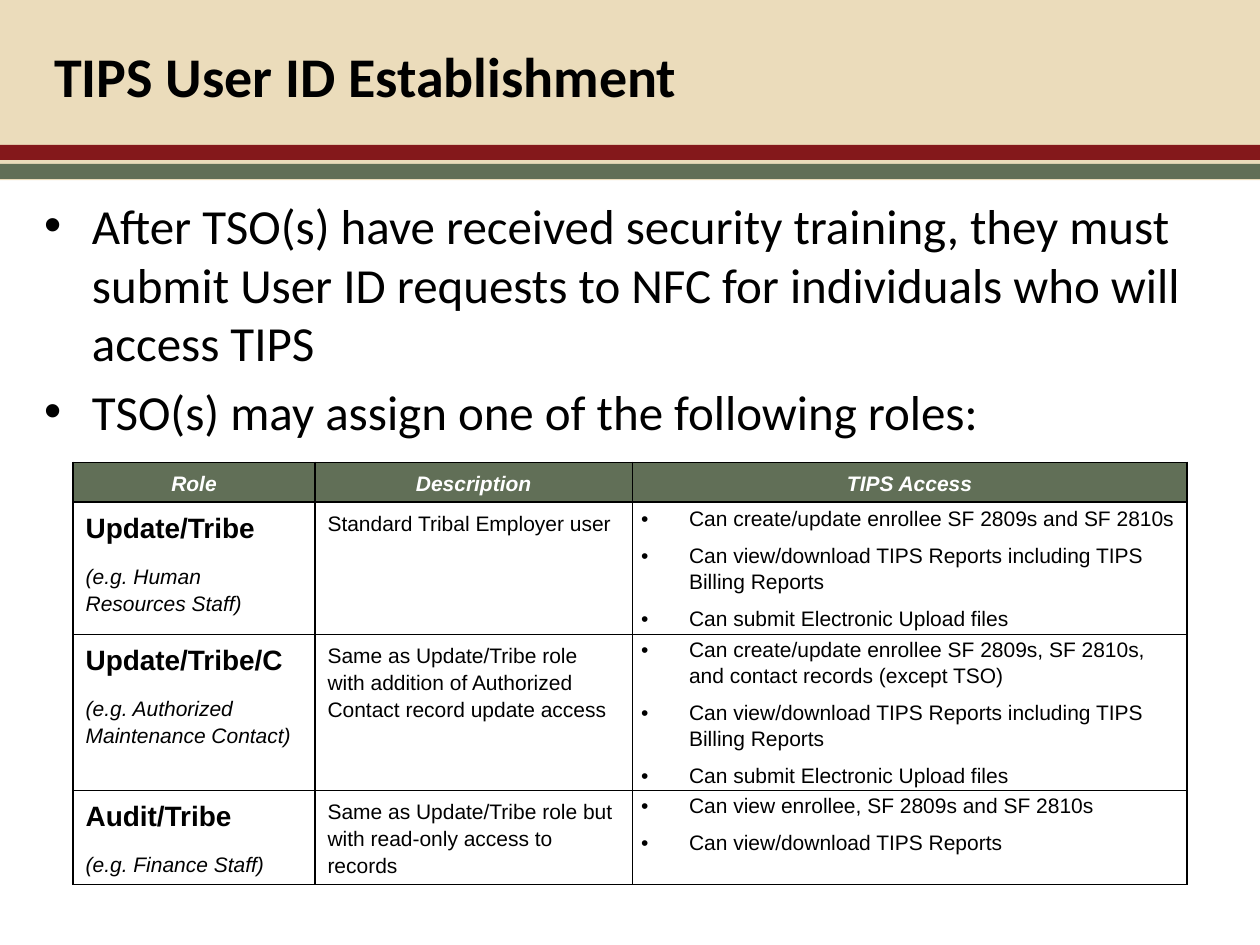
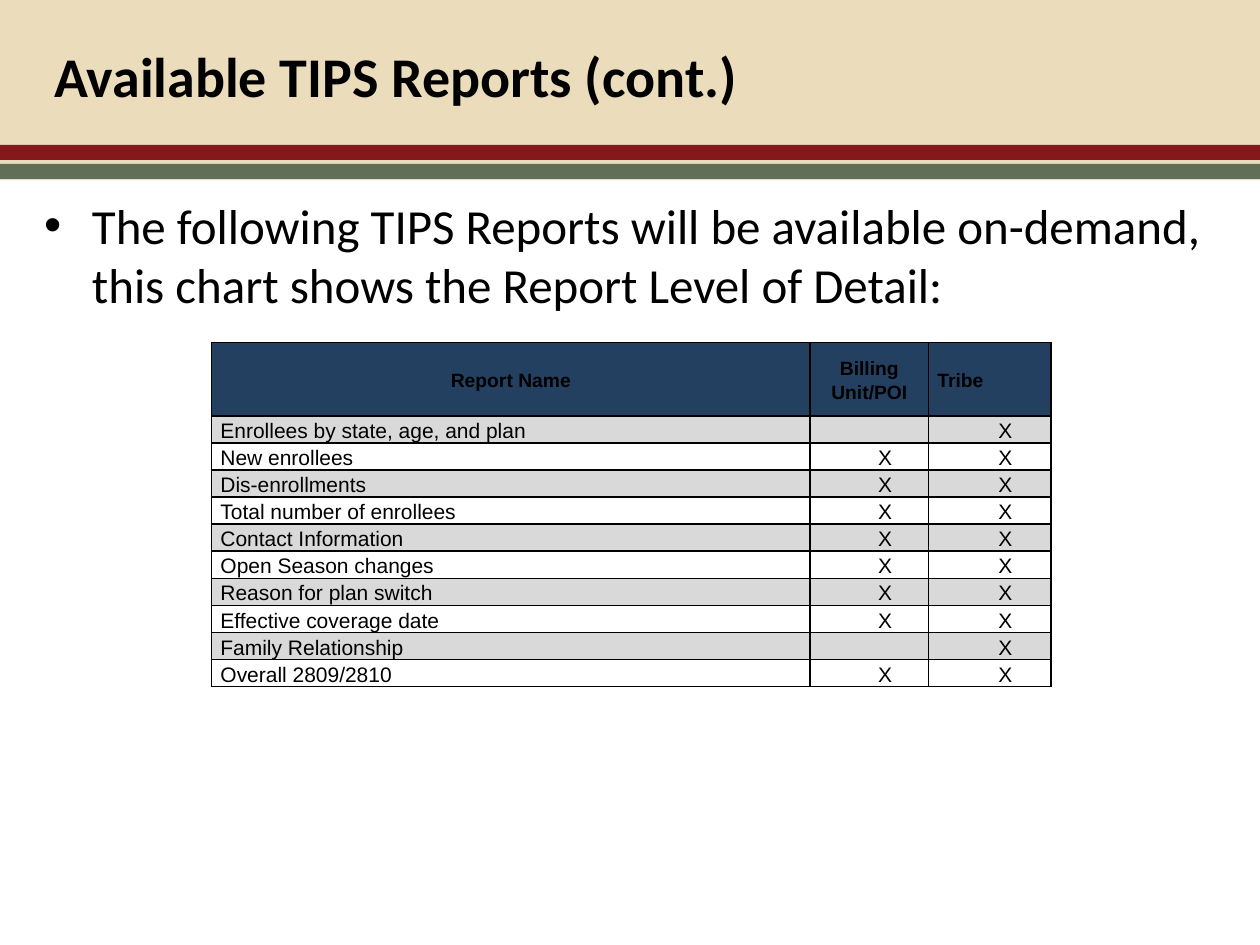
import dataclasses

import pptx
import pptx.dml.color
import pptx.enum.shapes
import pptx.enum.text
import pptx.oxml.xmlchemy
import pptx.util

Inches = pptx.util.Inches
Align = pptx.enum.text.PP_ALIGN
Anchor = pptx.enum.text.MSO_ANCHOR


@dataclasses.dataclass(frozen=True)
class Theme:
    """Colours, fonts and type sizes of the deck."""

    sand: str = "EBDCBB"
    red: str = "84181B"
    green: str = "616F57"
    navy: str = "244061"
    grey: str = "D9D9D9"
    white: str = "FFFFFF"
    black: str = "000000"
    heading_font: str = "Calibri"
    table_font: str = "Arial"
    title_size: float = 32
    body_size: float = 28
    role_size: float = 16
    table_size: float = 12
    report_header_size: float = 11
    table_line_spacing: float = 1.15


@dataclasses.dataclass(frozen=True)
class Box:
    """A rectangle in inches."""

    left: float
    top: float
    width: float
    height: float

    def lengths(self):
        """Return the four sides as lengths."""
        return [Inches(side) for side in dataclasses.astuple(self)]


THEME = Theme()
HEADER_BOX = Box(0, 0, 10, 1.43)
TITLE_BOX = Box(0.33, 0, 8.2, 1.2)
BODY_BOX = Box(0.25, 1.5, 9.5, 5.37)
ROLES_BOX = Box(0.58, 3.67, 8.84, 3.34)
REPORTS_BOX = Box(1.68, 2.72, 6.66, 2.73)
ROLE_MARGINS = (0.1, 0.05, 0.1, 0.05)
ACCESS_MARGINS = (0.07, 0.01, 0.07, 0.02)
REPORT_MARGINS = (0.07, 0, 0.07, 0)

VIEW_BILLING = "Can view/download TIPS Reports including TIPS Billing Reports"
SUBMIT_FILES = "Can submit Electronic Upload files"
ROLES = [
    ("Update/Tribe", "(e.g. Human Resources Staff)", "Standard Tribal Employer user",
     ["Can create/update enrollee SF 2809s and SF 2810s", VIEW_BILLING, SUBMIT_FILES]),
    ("Update/Tribe/C", "(e.g. Authorized Maintenance Contact)",
     "Same as Update/Tribe role with addition of Authorized Contact record update access",
     ["Can create/update enrollee SF 2809s, SF 2810s, and contact records (except TSO)",
      VIEW_BILLING, SUBMIT_FILES]),
    ("Audit/Tribe", "(e.g. Finance Staff)",
     "Same as Update/Tribe role but with read-only access to records",
     ["Can view enrollee, SF 2809s and SF 2810s", "Can view/download TIPS Reports"]),
]
REPORTS = ["Enrollees by state, age, and plan", "New enrollees", "Dis-enrollments",
           "Total number of enrollees", "Contact Information", "Open Season changes",
           "Reason for plan switch", "Effective coverage date", "Family Relationship",
           "Overall 2809/2810"]
TRIBE_ONLY = {"Enrollees by state, age, and plan", "Family Relationship"}


def rgb(colour):
    """Return a colour object for a hexadecimal string."""
    return pptx.dml.color.RGBColor.from_string(colour)


def add_child(parent, tag, **attributes):
    """Append a drawing element with attributes to its parent."""
    child = pptx.oxml.xmlchemy.OxmlElement(tag)
    for name, value in attributes.items():
        child.set(name, str(value))
    parent.append(child)
    return child


def add_text(paragraph, text, size, font=THEME.table_font, colour=THEME.black,
             bold=False, italic=False):
    """Add one formatted run to a paragraph."""
    run = paragraph.add_run()
    run.text = text
    run.font.name = font
    run.font.size = pptx.util.Pt(size)
    run.font.bold = bold
    run.font.italic = italic
    run.font.color.rgb = rgb(colour)


def next_paragraph(frame, index):
    """Return the first paragraph of a frame or add a further one."""
    return frame.paragraphs[0] if index == 0 else frame.add_paragraph()


def add_bullets(frame, items, size, font, space_before, space_after=0, line_spacing=None):
    """Fill a text frame with a bulleted list."""
    for index, item in enumerate(items):
        paragraph = next_paragraph(frame, index)
        properties = paragraph._p.get_or_add_pPr()
        properties.set("marL", str(Inches(0.38)))
        properties.set("indent", str(Inches(-0.38)))
        add_child(properties, "a:buFont", typeface="Arial")
        add_child(properties, "a:buChar", char="•")
        paragraph.space_before = pptx.util.Pt(space_before if index else 0)
        paragraph.space_after = pptx.util.Pt(space_after)
        if line_spacing:
            paragraph.line_spacing = pptx.util.Pt(line_spacing)
        add_text(paragraph, item, size, font)


def add_header_bands(presentation, slide, box):
    """Draw the header bands and move them behind everything on the master."""
    tree = presentation.slide_master.shapes.element
    bands = [(0, box.height, THEME.sand), (1.15, 0.12, THEME.red), (1.3, 0.12, THEME.green)]
    for index, (offset, height, colour) in enumerate(bands):
        place = Box(box.left, box.top + offset, box.width, height)
        band = slide.shapes.add_shape(
            pptx.enum.shapes.MSO_SHAPE.RECTANGLE, *place.lengths())
        band.shadow.inherit = False
        band.fill.solid()
        band.fill.fore_color.rgb = rgb(colour)
        band.line.fill.background()
        tree.insert(2 + index, band.element)


def place_placeholder(placeholder, box, anchor):
    """Move a placeholder to its box and return its text frame."""
    placeholder.left, placeholder.top, placeholder.width, placeholder.height = box.lengths()
    frame = placeholder.text_frame
    frame.word_wrap = True
    frame.auto_size = pptx.enum.text.MSO_AUTO_SIZE.NONE
    frame.vertical_anchor = anchor
    return frame


def add_content_slide(presentation, title, points):
    """Add a slide with a title and a bulleted list."""
    slide = presentation.slides.add_slide(presentation.slide_layouts[1])
    frame = place_placeholder(slide.shapes.title, TITLE_BOX, Anchor.MIDDLE)
    paragraph = frame.paragraphs[0]
    paragraph.alignment = Align.LEFT
    add_text(paragraph, title, THEME.title_size, THEME.heading_font, bold=True)
    body = place_placeholder(slide.placeholders[1], BODY_BOX, Anchor.TOP)
    add_bullets(body, points, THEME.body_size, THEME.heading_font,
                space_before=THEME.body_size * 0.2)
    return slide


def add_grid(slide, box, widths, heights):
    """Add an unbanded table with the given column widths and row heights."""
    table = slide.shapes.add_table(len(heights), len(widths), *box.lengths()).table
    table.first_row = False
    table.horz_banding = False
    for column, width in zip(table.columns, widths):
        column.width = Inches(width)
    for row, height in zip(table.rows, heights):
        row.height = Inches(height)
    return table


def style_cell(cell, fill, margins, anchor=Anchor.TOP):
    """Border and fill a cell, set its margins and return its text frame."""
    properties = cell._tc.get_or_add_tcPr()
    for side in ("L", "R", "T", "B"):
        line = add_child(properties, f"a:ln{side}", w=pptx.util.Pt(1))
        add_child(add_child(line, "a:solidFill"), "a:srgbClr", val=THEME.black)
    cell.fill.solid()
    cell.fill.fore_color.rgb = rgb(fill)
    cell.margin_left, cell.margin_top, cell.margin_right, cell.margin_bottom = map(
        Inches, margins)
    cell.vertical_anchor = anchor
    return cell.text_frame


def add_table_paragraph(frame, index, text, size, alignment=Align.LEFT, space_after=0,
                        **style):
    """Add a paragraph with the line spacing of the tables."""
    paragraph = next_paragraph(frame, index)
    paragraph.alignment = alignment
    paragraph.line_spacing = THEME.table_line_spacing
    paragraph.space_after = pptx.util.Pt(space_after)
    add_text(paragraph, text, size, **style)
    return paragraph


def add_roles_table(slide, box):
    """Add the table of roles, descriptions and access rights."""
    table = add_grid(slide, box, (1.92, 2.52, 4.4), (0.31, 1.05, 1.24, 0.74))
    for column, heading in enumerate(("Role", "Description", "TIPS Access")):
        frame = style_cell(table.cell(0, column), THEME.green, ROLE_MARGINS, Anchor.MIDDLE)
        add_table_paragraph(frame, 0, heading, THEME.table_size, Align.CENTER, 10,
                            colour=THEME.white, bold=True, italic=True)
    for row, (role, example, description, rights) in enumerate(ROLES, start=1):
        frame = style_cell(table.cell(row, 0), THEME.white, ROLE_MARGINS)
        add_table_paragraph(frame, 0, role, THEME.role_size, space_after=10, bold=True)
        add_table_paragraph(frame, 1, example, THEME.table_size, space_after=10, italic=True)
        frame = style_cell(table.cell(row, 1), THEME.white, ROLE_MARGINS)
        add_table_paragraph(frame, 0, description, THEME.table_size, space_after=10)
        anchor = Anchor.TOP if row == len(ROLES) else Anchor.MIDDLE
        frame = style_cell(table.cell(row, 2), THEME.white, ACCESS_MARGINS, anchor)
        add_bullets(frame, rights, THEME.table_size, THEME.table_font, 3, 3, 15)


def add_reports_table(slide, box):
    """Add the table of reports and their levels of detail."""
    header_height = 0.58
    row_height = (box.height - header_height) / len(REPORTS)
    table = add_grid(slide, box, (4.75, 0.94, 0.97),
                     [header_height] + [row_height] * len(REPORTS))
    headings = [("Report Name", Align.CENTER), ("Billing Unit/POI", Align.CENTER),
                ("Tribe", Align.JUSTIFY)]
    for column, (heading, alignment) in enumerate(headings):
        frame = style_cell(table.cell(0, column), THEME.navy, REPORT_MARGINS, Anchor.MIDDLE)
        add_table_paragraph(frame, 0, heading, THEME.report_header_size, alignment, bold=True)
    for row, report in enumerate(REPORTS, start=1):
        fill = THEME.grey if row % 2 else THEME.white
        frame = style_cell(table.cell(row, 0), fill, REPORT_MARGINS)
        add_table_paragraph(frame, 0, report, THEME.table_size)
        for column, marked in ((1, report not in TRIBE_ONLY), (2, True)):
            frame = style_cell(table.cell(row, column), fill, REPORT_MARGINS)
            if marked:
                paragraph = add_table_paragraph(frame, 0, "X", THEME.table_size, Align.CENTER)
                paragraph._p.get_or_add_pPr().set("marL", str(Inches(0.25)))
            else:
                add_child(frame.paragraphs[0]._p, "a:endParaRPr", sz=THEME.table_size * 100)


def main():
    """Build the two slides and save them."""
    presentation = pptx.Presentation()
    presentation.slide_width = Inches(10)
    presentation.slide_height = Inches(7.5)
    roles_slide = add_content_slide(presentation, "TIPS User ID Establishment", [
        "After TSO(s) have received security training, they must submit User ID requests "
        "to NFC for individuals who will access TIPS",
        "TSO(s) may assign one of the following roles:"])
    add_header_bands(presentation, roles_slide, HEADER_BOX)
    add_roles_table(roles_slide, ROLES_BOX)
    reports_slide = add_content_slide(presentation, "Available TIPS Reports (cont.)", [
        "The following TIPS Reports will be available on-demand, this chart shows the "
        "Report Level of Detail:"])
    add_reports_table(reports_slide, REPORTS_BOX)
    presentation.save("out.pptx")


if __name__ == "__main__":
    main()
